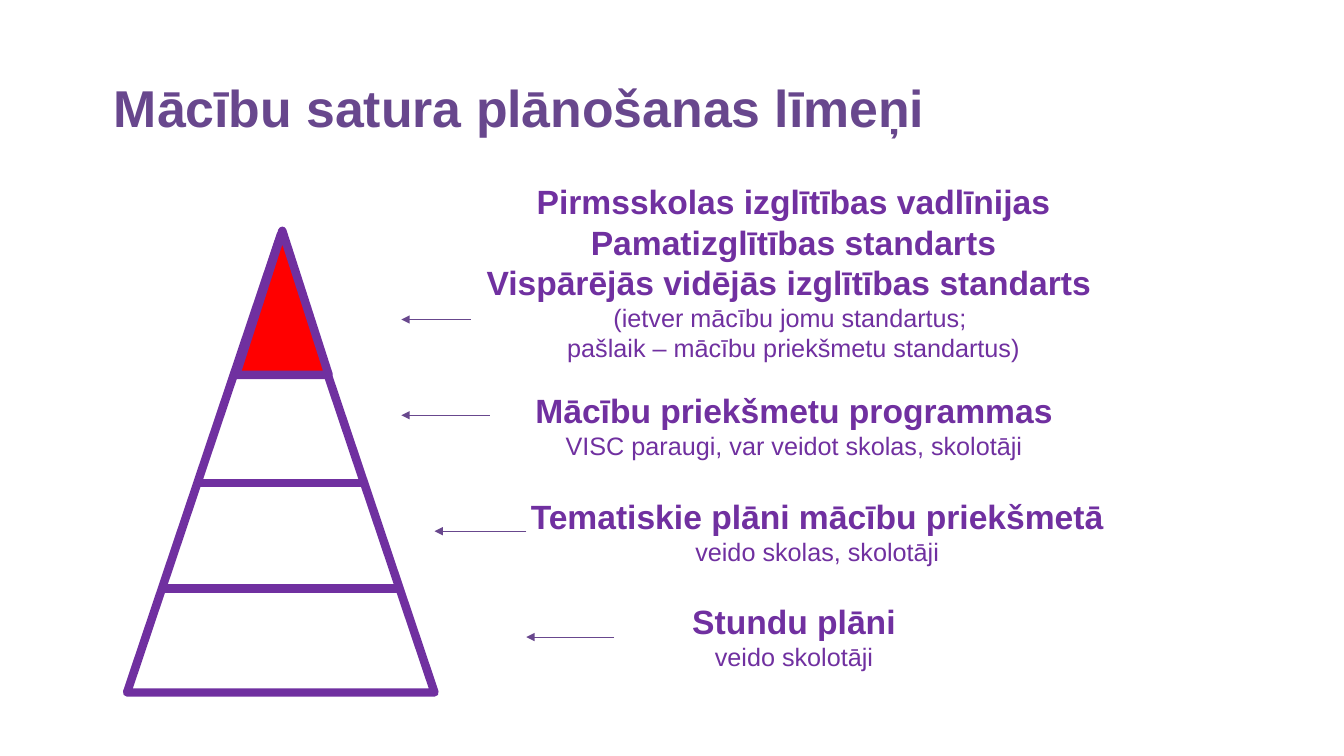
import pptx
import pptx.util
import pptx.dml.color
import pptx.enum.shapes
import pptx.enum.text
import pptx.oxml
import pptx.oxml.ns
from pptx.util import Inches

PURPLE = "7030A0"
PLUM = "68478D"
RED = "FF0000"
FONT = "Arial"

# Left, top, width, height, bold heads, plain notes
LEVELS = [
    (3.59, 1.75, 8.56, 1.92,
     ["Pirmsskolas izglītības vadlīnijas", "Pamatizglītības standarts",
      "Vispārējās vidējās izglītības standarts "],
     ["(ietver mācību jomu standartus; ",
      "pašlaik – mācību priekšmetu standartus)"]),
    (4.54, 3.82, 6.67, 0.81, ["Mācību priekšmetu programmas"],
     ["VISC paraugi, var veidot skolas, skolotāji"]),
    (4.77, 4.87, 6.67, 0.81, ["Tematiskie plāni mācību priekšmetā"],
     ["veido skolas, skolotāji"]),
    (4.54, 5.91, 6.67, 0.81, ["Stundu plāni"], ["veido skolotāji"]),
]
# Start x, end x, y
BARS = [(1.95, 3.59, 4.79), (1.62, 3.98, 5.84)]
ARROWS = [(4.67, 3.98, 3.17), (4.86, 3.98, 4.12),
          (5.22, 4.31, 5.27), (6.09, 5.22, 6.32)]


def color(code):
    return pptx.dml.color.RGBColor.from_string(code)


def style(para, size, code, bold):
    for run in para.runs:
        font = run.font
        font.name, font.size, font.bold = FONT, pptx.util.Pt(size), bold
        font.color.rgb = color(code)


def add_title(slide, text):
    title = slide.shapes.title
    title.left, title.top = Inches(1.13), Inches(0.47)
    title.width, title.height = Inches(11.08), Inches(1.25)
    frame = title.text_frame
    frame.text = text
    frame.word_wrap = True
    frame.auto_size = pptx.enum.text.MSO_AUTO_SIZE.NONE
    frame.vertical_anchor = pptx.enum.text.MSO_ANCHOR.MIDDLE
    frame.margin_left = frame.margin_right = 0
    frame.margin_top = frame.margin_bottom = 0
    para = frame.paragraphs[0]
    para.alignment = pptx.enum.text.PP_ALIGN.LEFT
    para.line_spacing = 0.9
    style(para, 37, PLUM, True)


def add_level(slide, left, top, width, height, heads, notes):
    box = slide.shapes.add_textbox(
        Inches(left), Inches(top), Inches(width), Inches(height))
    frame = box.text_frame
    frame.word_wrap = True
    frame.auto_size = pptx.enum.text.MSO_AUTO_SIZE.SHAPE_TO_FIT_TEXT
    for i, text in enumerate(heads + notes):
        para = frame.add_paragraph() if i else frame.paragraphs[0]
        para.text = text
        para.alignment = pptx.enum.text.PP_ALIGN.CENTER
        head = i < len(heads)
        style(para, 24 if head else 18, PURPLE, head)


def add_cone(slide, left, top, width, height, fill=None):
    cone = slide.shapes.add_shape(
        pptx.enum.shapes.MSO_SHAPE.ISOSCELES_TRIANGLE,
        Inches(left), Inches(top), Inches(width), Inches(height))
    cone.shadow.inherit = False
    if fill:
        cone.fill.solid()
        cone.fill.fore_color.rgb = color(fill)
    else:
        cone.fill.background()
    cone.line.color.rgb = color(PURPLE)
    cone.line.width = pptx.util.Pt(6)


def add_line(slide, start, end, y, code, width, arrow=False):
    line = slide.shapes.add_connector(
        pptx.enum.shapes.MSO_CONNECTOR.STRAIGHT,
        Inches(start), Inches(y), Inches(end), Inches(y))
    line.line.color.rgb = color(code)
    line.line.width = pptx.util.Pt(width)
    if arrow:
        tail = pptx.oxml.parse_xml(
            f'<a:tailEnd {pptx.oxml.ns.nsdecls("a")} type="triangle"/>')
        line.line._get_or_add_ln().append(tail)
    props = line._element.spPr
    props.append(pptx.oxml.parse_xml(
        f'<a:effectLst {pptx.oxml.ns.nsdecls("a")}/>'))


def main():
    deck = pptx.Presentation()
    deck.slide_width, deck.slide_height = Inches(13.33), Inches(7.5)
    slide = deck.slides.add_slide(deck.slide_layouts[5])

    # Title and level texts
    add_title(slide, "Mācību satura plānošanas līmeņi")
    for level in LEVELS:
        add_level(slide, *level)

    # Pyramid with its red top
    add_cone(slide, 1.26, 2.33, 3.05, 4.54)
    add_cone(slide, 2.34, 2.29, 0.92, 1.43, RED)
    for bar in BARS:
        add_line(slide, *bar, PURPLE, 6)

    # Arrows from texts to pyramid
    for arrow in ARROWS:
        add_line(slide, *arrow, PLUM, 0.75, True)

    deck.save("out.pptx")


if __name__ == "__main__":
    main()
